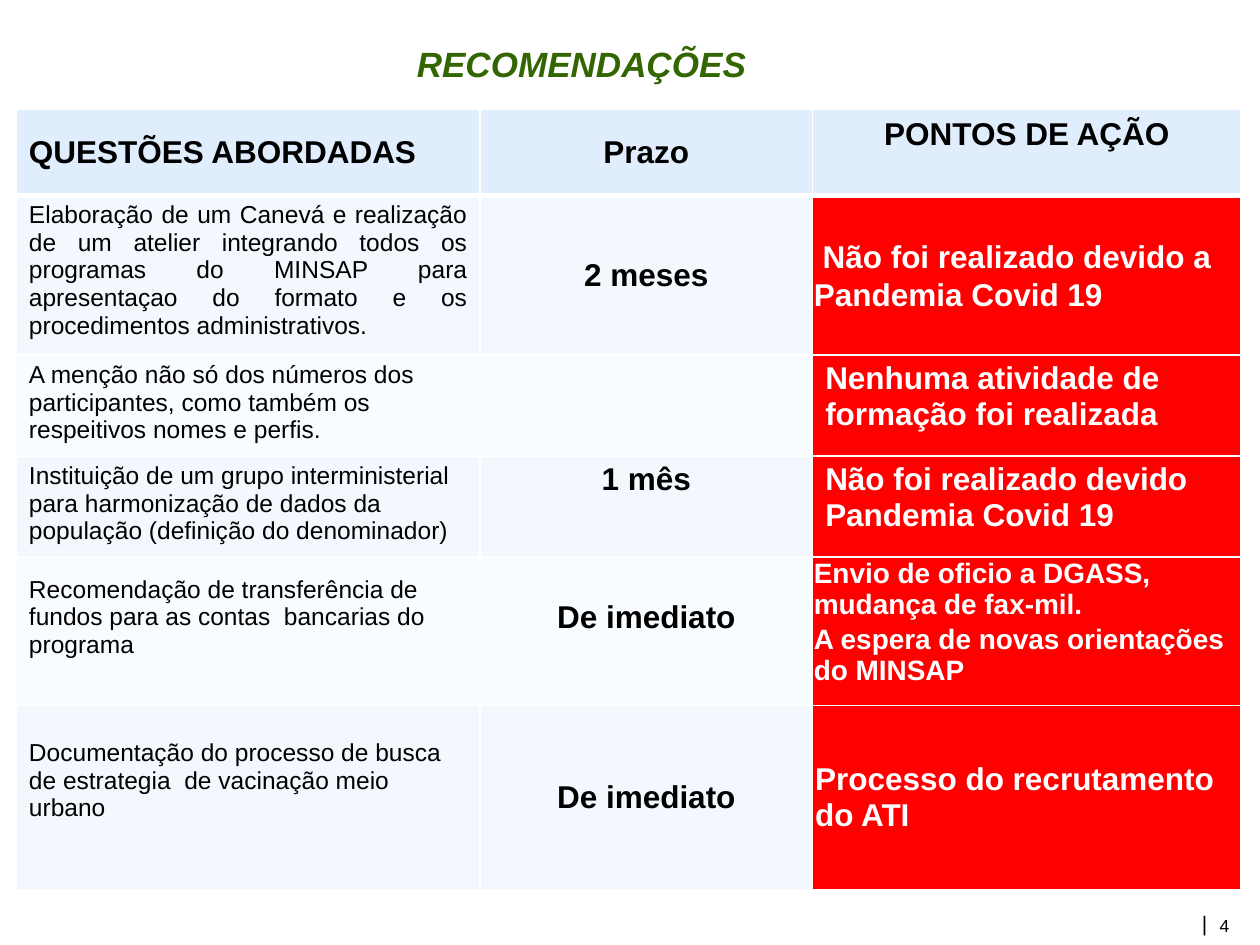
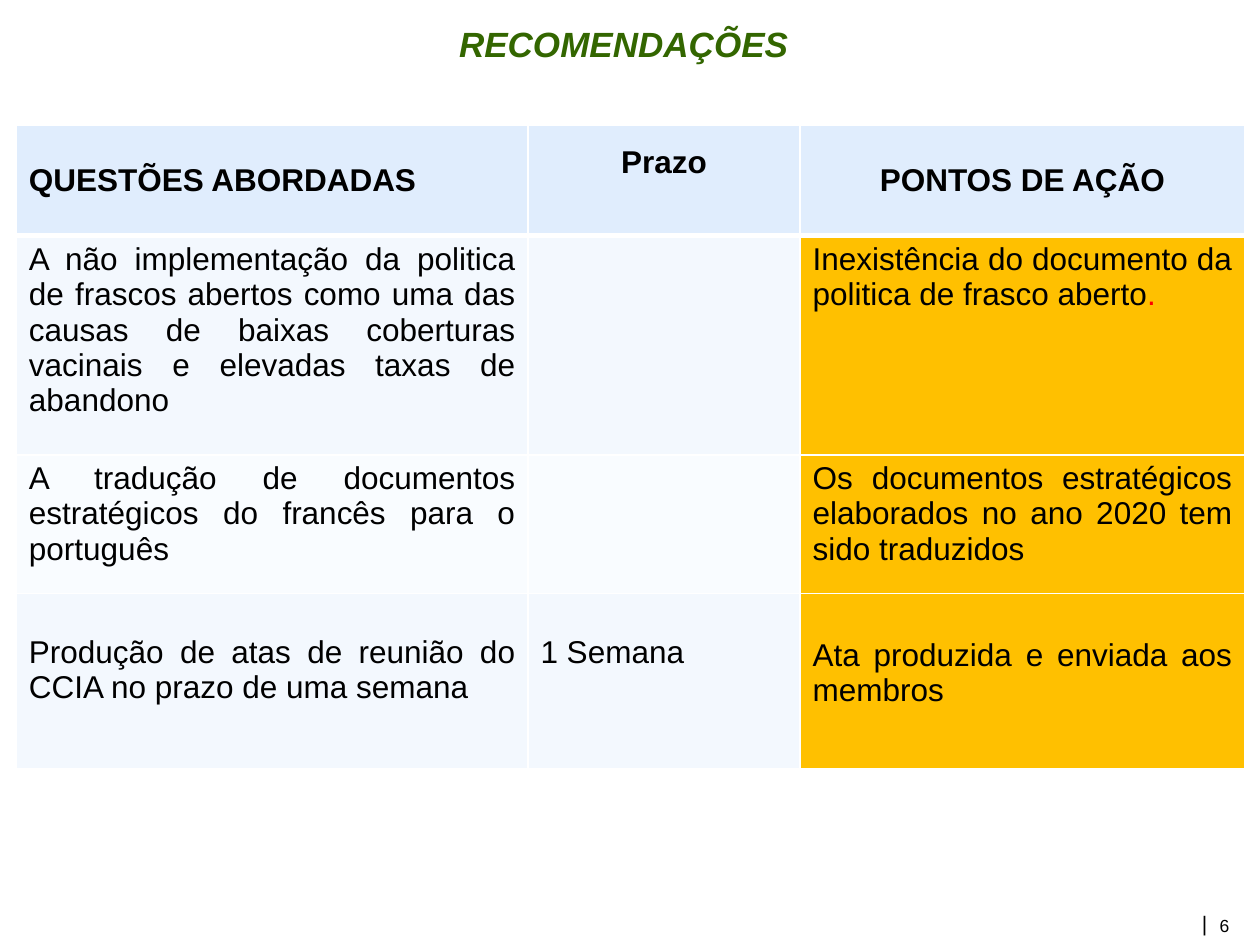
"""Build two slides of recommendations, each a table with a title and a page mark."""
from dataclasses import dataclass
from functools import partial

from lxml import etree
from pptx import Presentation
from pptx.dml.color import RGBColor
from pptx.enum.text import MSO_ANCHOR, PP_ALIGN
from pptx.oxml.ns import qn
from pptx.slide import Slide
from pptx.table import _Cell
from pptx.text.text import _Paragraph
from pptx.util import Inches, Pt

LEFT, CENTER, RIGHT, JUST = PP_ALIGN.LEFT, PP_ALIGN.CENTER, PP_ALIGN.RIGHT, PP_ALIGN.JUSTIFY
TOP, MIDDLE = MSO_ANCHOR.TOP, MSO_ANCHOR.MIDDLE


@dataclass(frozen=True)
class Theme:
    """Colours, font and type sizes."""
    face: str = "Arial"
    green: str = "336600"
    black: str = "000000"
    white: str = "FFFFFF"
    red: str = "FF0000"
    amber: str = "FFC000"
    head: str = "E0EDFD"
    bands: tuple[str, str] = ("F3F8FE", "F9FCFF")
    title: int = 20
    large: int = 18
    mid: int = 16
    small: int = 14
    bar: int = 12
    note: int = 10
    thin: int = 1
    thick: int = 3


THEME = Theme()


@dataclass(frozen=True)
class Entry:
    """Text and setting of one table cell, with margins in inches."""
    lines: tuple[str, ...] = ()
    size: int = THEME.large
    bold: bool = False
    align: PP_ALIGN = LEFT
    ink: str = THEME.black
    anchor: MSO_ANCHOR = TOP
    side: float = 0.1
    top: float = 0.05
    base: float = 0.05
    lead: float = 1.0
    tail: str = ""


@dataclass(frozen=True)
class Page:
    """One slide: number, title box, table place, sizes and entries."""
    num: int
    title: tuple[float, float, float, float]
    top: float
    cols: tuple[float, ...]
    rows: tuple[float, ...]
    mark: str
    grid: tuple[tuple[Entry, ...], ...]


Small = partial(Entry, size=THEME.small)
Just = partial(Entry, align=JUST)
Term = partial(Entry, bold=True, align=CENTER)
Act = partial(Entry, bold=True, ink=THEME.white)
Tight = partial(Act, side=0.01, top=0.01, base=0.01)
Head = partial(Term, anchor=MIDDLE)
BLANK = Entry()
ISSUE = Head(("QUESTÕES ABORDADAS",), align=JUST)
DUE, POINTS = ("Prazo",), ("PONTOS DE AÇÃO",)
SOON = ("De imediato",)
RAISED = 0.33

PAGES = (
    Page(4, (0.13, 0.29, 8.97, 0.91), 0.87, (3.68, 2.64, 3.4),
         (0.68, 1.23, 0.78, 0.78, 1.18, 1.46), THEME.red, (
        (ISSUE, Head(DUE), Head(POINTS, base=RAISED)),
        (Small(("Elaboração de um Canevá e realização de um atelier integrando todos os "
                "programas do MINSAP para apresentaçao do formato e os procedimentos "
                "administrativos.",), align=JUST),
         Term(("2 meses",), anchor=MIDDLE),
         Tight((" Não foi realizado devido a Pandemia Covid 19",), anchor=MIDDLE, lead=1.07)),
        (Small(("A menção não só dos números dos participantes, como também os "
                "respeitivos nomes e perfis.",)),
         BLANK,
         Act(("Nenhuma atividade de formação foi realizada",))),
        (Small(("Instituição de um grupo interministerial para harmonização de dados da "
                "população (definição do denominador)",)),
         Term(("1 mês",)),
         Act(("Não foi realizado devido Pandemia Covid 19",))),
        (Small(("Recomendação de transferência de fundos para as contas  bancarias do "
                "programa",), anchor=MIDDLE, base=0.27),
         Term(SOON, top=0.34),
         Tight(("Envio de oficio a DGASS, mudança de fax-mil.",
                "A espera de novas orientações do MINSAP"), size=THEME.mid)),
        (Small(("Documentação do processo de busca de estrategia  de vacinação meio "
                "urbano",), top=0.27),
         Term(SOON, anchor=MIDDLE),
         Tight(("Processo do recrutamento do ATI",), anchor=MIDDLE, side=0.02)),
    )),
    Page(6, (0.13, 0.13, 9.64, 0.63), 0.99, (4.06, 2.16, 3.53),
         (0.88, 1.74, 1.1, 1.39), THEME.amber, (
        (ISSUE, Head(DUE, base=RAISED), Head(POINTS)),
        (Just(("A não implementação da politica de frascos abertos como uma das causas "
               "de baixas coberturas vacinais e elevadas taxas de abandono",)),
         BLANK,
         Just(("Inexistência do documento da politica de frasco aberto",), tail=".")),
        (Just(("A tradução de documentos estratégicos do francês para o português",)),
         BLANK,
         Just(("Os documentos estratégicos elaborados no ano 2020 tem sido traduzidos",))),
        (Just(("Produção de atas de reunião do CCIA no prazo de uma semana",), top=RAISED),
         Just(("1 Semana",), top=RAISED),
         Just(("Ata produzida e enviada aos membros",), top=0.35)),
    )),
)


def style(para: _Paragraph, size: int, ink: str, align: PP_ALIGN,
          bold: bool = False, slant: bool = False) -> None:
    """Set the font and alignment of a paragraph."""
    para.alignment = align
    font = para.font
    font.name, font.size, font.bold, font.italic = THEME.face, Pt(size), bold, slant
    font.color.rgb = RGBColor.from_string(ink)


def label(slide: Slide, box: tuple[float, float, float, float], text: str, size: int,
          ink: str = THEME.black, align: PP_ALIGN = LEFT, anchor: MSO_ANCHOR = TOP,
          title: bool = False) -> None:
    """Add a line of text, with margins and wrapping when it is a title."""
    frame = slide.shapes.add_textbox(*map(Inches, box)).text_frame
    frame.word_wrap, frame.vertical_anchor = title, anchor
    side, edge = (0.1, 0.05) if title else (0, 0)
    frame.margin_left = frame.margin_right = Inches(side)
    frame.margin_top = frame.margin_bottom = Inches(edge)
    para = frame.paragraphs[0]
    para.text = text
    style(para, size, ink, align, title, title)


def edge(cell: _Cell, row: int) -> None:
    """Draw white borders, with a thick rule under the header row."""
    props = cell._tc.get_or_add_tcPr()
    for name in ("lnL", "lnR", "lnT", "lnB"):
        rule = (row, name) in ((0, "lnB"), (1, "lnT"))
        line = etree.SubElement(props, qn(f"a:{name}"),
                                w=str(Pt(THEME.thick if rule else THEME.thin)))
        fill = etree.SubElement(line, qn("a:solidFill"))
        etree.SubElement(fill, qn("a:srgbClr"), val=THEME.white)


def write(cell: _Cell, entry: Entry) -> None:
    """Put the text of an entry into a cell."""
    cell.vertical_anchor = entry.anchor
    cell.margin_left = cell.margin_right = Inches(entry.side)
    cell.margin_top, cell.margin_bottom = Inches(entry.top), Inches(entry.base)
    frame = cell.text_frame
    for i, text in enumerate(entry.lines):
        para = frame.add_paragraph() if i else frame.paragraphs[0]
        para.add_run().text = text
        para.line_spacing = entry.lead
        if i:
            para.space_before = Pt(2)
        style(para, entry.size, entry.ink, entry.align, entry.bold)
    if entry.tail:
        run = frame.paragraphs[-1].add_run()
        run.text = entry.tail
        run.font.color.rgb = RGBColor.from_string(THEME.red)


def shade(page: Page, row: int, col: int) -> str:
    """Choose the fill of a cell from its place."""
    if row == 0:
        return THEME.head
    return page.mark if col == len(page.cols) - 1 else THEME.bands[(row - 1) % 2]


def chart(slide: Slide, page: Page) -> None:
    """Add the table of a page."""
    size = (0.13, page.top, sum(page.cols), sum(page.rows))
    table = slide.shapes.add_table(len(page.rows), len(page.cols), *map(Inches, size)).table
    table.first_row = table.horz_banding = False
    for col, width in zip(table.columns, page.cols):
        col.width = Inches(width)
    for row, height in zip(table.rows, page.rows):
        row.height = Inches(height)
    for r, line in enumerate(page.grid):
        for c, entry in enumerate(line):
            cell = table.cell(r, c)
            edge(cell, r)
            cell.fill.solid()
            cell.fill.fore_color.rgb = RGBColor.from_string(shade(page, r, c))
            write(cell, entry)


def main() -> None:
    """Build and save the slides."""
    deck = Presentation()
    deck.slide_width, deck.slide_height = Inches(10), Inches(7.5)
    for page in PAGES:
        slide = deck.slides.add_slide(deck.slide_layouts[6])
        label(slide, (9.68, 7.26, 0.21, 0.17), str(page.num), THEME.note)
        label(slide, (9.54, 7.22, 0.04, 0.21), "|", THEME.bar, align=RIGHT, anchor=MIDDLE)
        label(slide, page.title, "RECOMENDAÇÕES", THEME.title, THEME.green, CENTER, title=True)
        chart(slide, page)
    deck.save("out.pptx")


if __name__ == "__main__":
    main()
